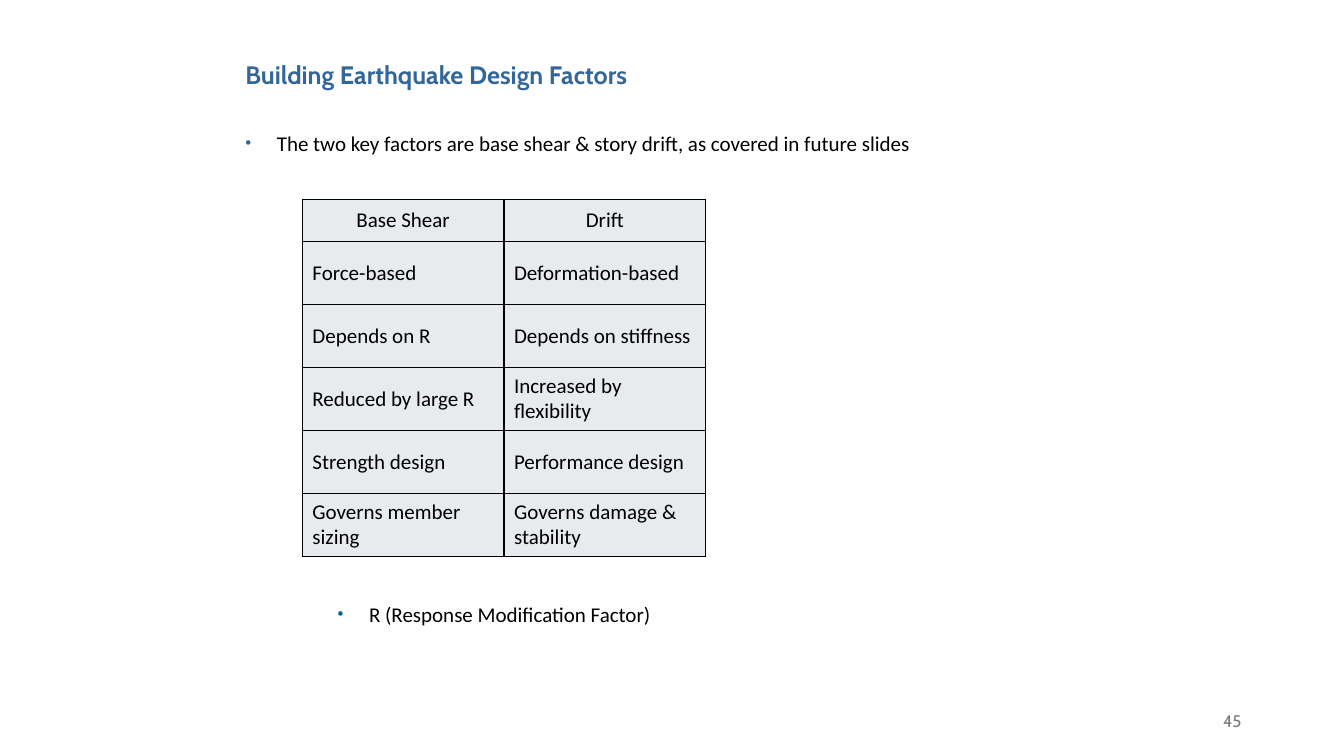
from pptx import Presentation
from pptx.dml.color import RGBColor
from pptx.enum.text import MSO_ANCHOR, MSO_AUTO_SIZE, PP_ALIGN
from pptx.oxml import parse_xml
from pptx.oxml.ns import nsdecls
from pptx.util import Emu, Pt

TOP, MIDDLE = MSO_ANCHOR.TOP, MSO_ANCHOR.MIDDLE
LEFT, CENTER, RIGHT = PP_ALIGN.LEFT, PP_ALIGN.CENTER, PP_ALIGN.RIGHT
NO_AUTOFIT = MSO_AUTO_SIZE.NONE
TITLE_AND_CONTENT = 1

SLIDE_WIDTH, SLIDE_HEIGHT = 1280, 720
HEADER_HEIGHT, ROW_HEIGHT = 40, 60
BULLET_INDENT = 30
BLACK, GREY, BLUE, DEEP_BLUE, CELL_FILL = "000000", "797979", "336699", "006699", "E8EAED"

FACTORS = [
    ("Base Shear", "Drift"),
    ("Force-based", "Deformation-based"),
    ("Depends on R", "Depends on stiffness"),
    ("Reduced by large R", "Increased by flexibility"),
    ("Strength design", "Performance design"),
    ("Governs member sizing", "Governs damage & stability"),
]


def px(length):
    return Emu(length * 9525)


def color(hex_string):
    return RGBColor.from_string(hex_string)


def place(shape, box):
    shape.left, shape.top, shape.width, shape.height = map(px, box)


def write(text_frame, text, size=15, font="Calibri", hex_color=BLACK,
          bold=False, align=LEFT):
    """Fill a text frame with one formatted paragraph."""
    text_frame.text = text
    paragraph = text_frame.paragraphs[0]
    paragraph.alignment = align
    paragraph.space_before = Pt(0)
    run_font = paragraph.runs[0].font
    run_font.size, run_font.name, run_font.bold = Pt(size), font, bold
    run_font.color.rgb = color(hex_color)
    return paragraph


def set_frame(text_frame, anchor=TOP):
    text_frame.word_wrap = True
    text_frame.auto_size = NO_AUTOFIT
    text_frame.vertical_anchor = anchor


def add_bullet(paragraph, hex_color):
    properties = paragraph._p.get_or_add_pPr()
    properties.set("marL", str(px(BULLET_INDENT)))
    properties.set("indent", str(-px(BULLET_INDENT)))
    for element in (
        f'<a:buClr {nsdecls("a")}><a:srgbClr val="{hex_color}"/></a:buClr>',
        f'<a:buSzPct {nsdecls("a")} val="80000"/>',
        f'<a:buFont {nsdecls("a")} typeface="Arial"/>',
        f'<a:buChar {nsdecls("a")} char="•"/>',
    ):
        properties.append(parse_xml(element))


def add_borders(cell):
    properties = cell._tc.get_or_add_tcPr()
    for side in ("lnL", "lnR", "lnT", "lnB"):
        properties.append(parse_xml(
            f'<a:{side} {nsdecls("a")} w="{Pt(1)}"><a:solidFill>'
            f'<a:srgbClr val="{BLACK}"/></a:solidFill></a:{side}>'))


def fill_title(slide, box):
    title = slide.shapes.title
    place(title, box)
    set_frame(title.text_frame)
    write(title.text_frame, "Building Earthquake Design Factors", 18, "Cabin", BLUE, True)


def fill_bullet(shape, box, text, bullet_color):
    place(shape, box)
    set_frame(shape.text_frame)
    add_bullet(write(shape.text_frame, text), bullet_color)


def add_factor_table(slide, left, top, width):
    height = HEADER_HEIGHT + ROW_HEIGHT * (len(FACTORS) - 1)
    columns = len(FACTORS[0])
    table = slide.shapes.add_table(
        len(FACTORS), columns, *map(px, (left, top, width, height))).table
    table.first_row = table.horz_banding = False
    for column in table.columns:
        column.width = px(width // columns)
    for row_index, labels in enumerate(FACTORS):
        is_header = row_index == 0
        table.rows[row_index].height = px(HEADER_HEIGHT if is_header else ROW_HEIGHT)
        for column_index, label in enumerate(labels):
            cell = table.cell(row_index, column_index)
            cell.vertical_anchor = MIDDLE
            write(cell.text_frame, label, align=CENTER if is_header else LEFT)
            add_borders(cell)
            cell.fill.solid()
            cell.fill.fore_color.rgb = color(CELL_FILL)


def add_page_number(slide, box):
    text_frame = slide.shapes.add_textbox(*map(px, box)).text_frame
    set_frame(text_frame, MIDDLE)
    write(text_frame, "45", 12, "Cabin", GREY, align=RIGHT)


def main():
    presentation = Presentation()
    presentation.slide_width, presentation.slide_height = px(SLIDE_WIDTH), px(SLIDE_HEIGHT)
    slide = presentation.slides.add_slide(presentation.slide_layouts[TITLE_AND_CONTENT])

    # Title and introduction
    fill_title(slide, (224, 52, 808, 68))
    fill_bullet(slide.placeholders[1], (224, 119, 656, 54),
                "The two key factors are base shear & story drift, as covered in future slides",
                BLUE)

    # Comparison table and the note below it
    add_factor_table(slide, 288, 190, 384)
    note_box = (312, 568, 512, 34)
    fill_bullet(slide.shapes.add_textbox(*map(px, note_box)), note_box,
                "R (Response Modification Factor)", DEEP_BLUE)

    # Footer
    add_page_number(slide, (904, 667, 288, 38))
    presentation.save("out.pptx")


if __name__ == "__main__":
    main()
